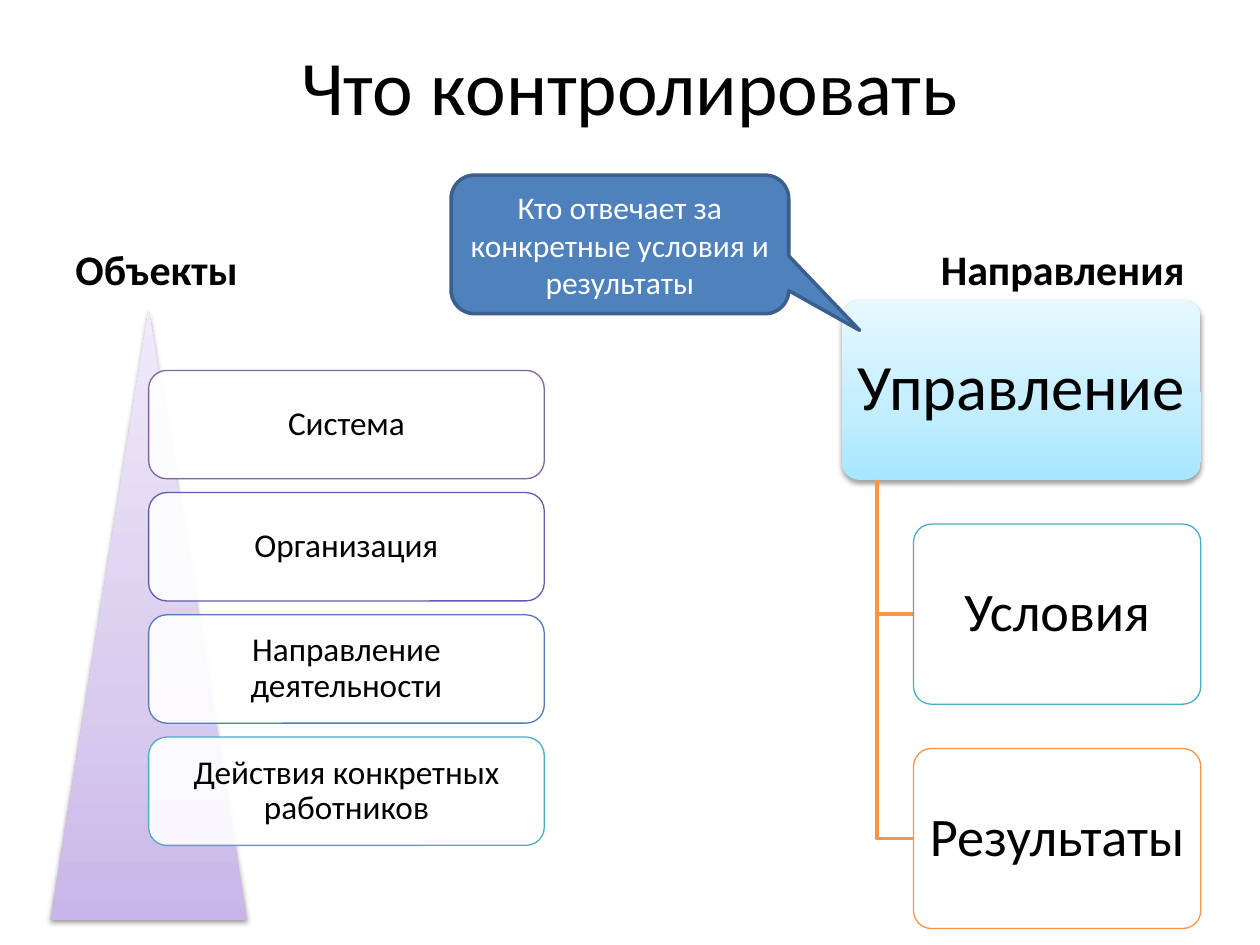
import copy
import pptx
import pptx.util
import pptx.dml.color
import pptx.oxml
import pptx.oxml.ns
import pptx.enum.shapes
import pptx.enum.text

Inches, Pt = pptx.util.Inches, pptx.util.Pt
SHAPE = pptx.enum.shapes.MSO_SHAPE
ALIGN = pptx.enum.text.PP_ALIGN
ANCHOR = pptx.enum.text.MSO_ANCHOR
qn = pptx.oxml.ns.qn

# Content
TITLE = "Что контролировать"
HEADS = [("Объекты", 0.5, ALIGN.LEFT), ("Направления", 5.08, ALIGN.RIGHT)]
LEVELS = [
    ("Система", "violet"),
    ("Организация", "indigo"),
    ("Направление деятельности", "blue"),
    ("Действия конкретных работников", "teal"),
]
ROOT = "Управление"
LEAVES = [("Условия", "teal"), ("Результаты", "orange")]
CALL = "Кто отвечает за конкретные условия и результаты"

COLORS = {
    "black": "000000", "white": "FFFFFF", "violet": "8064A2",
    "indigo": "5F5BAE", "blue": "537ABA", "teal": "4BACC6",
    "orange": "F79646", "call": "4F81BD", "edge": "3A5F8C",
}
LILAC = [(0, "C9B5E8"), (0.35, "D8CBEE"), (1, "F0EAF9")]
SKY = [(0, "A7E6FF"), (0.35, "C1EDFF"), (1, "E7F8FF")]
SHADE = (
    '<a:outerShdw %s blurRad="39370" dist="20320" dir="5400000" rotWithShape="0">'
    '<a:srgbClr val="000000"><a:alpha val="38000"/></a:srgbClr></a:outerShdw>'
    % pptx.oxml.ns.nsdecls("a")
)

# Layout rules, in inches
LEVEL_X, LEVEL_Y, LEVEL_W, LEVEL_H, LEVEL_STEP = 1.18, 2.94, 3.14, 0.86, 0.97
ROOT_X, ROOT_Y, ROOT_W, NODE_H = 6.68, 2.38, 2.85, 1.43
LEAF_X, LEAF_W, LEAF_STEP = 7.25, 2.28, 1.78
TRUNK_X = 6.96


def rgb(name):
    return pptx.dml.color.RGBColor.from_string(COLORS.get(name, name))


def write(shape, text, size, color="black", align=ALIGN.CENTER,
          anchor=ANCHOR.MIDDLE, pad=(0.1, 0.05), bold=False, spacing=None):
    frame = shape.text_frame
    frame.word_wrap = True
    frame.vertical_anchor = anchor
    frame.margin_left = frame.margin_right = Inches(pad[0])
    frame.margin_top = frame.margin_bottom = Inches(pad[1])
    frame.text = text
    para = frame.paragraphs[0]
    para.alignment = align
    para.line_spacing = spacing
    font = para.font
    font.name, font.size, font.bold = "Calibri", Pt(size), bold
    font.color.rgb = rgb(color)


def add(slide, kind, box, line=None, width=0.75):
    shape = slide.shapes.add_shape(kind, *map(Inches, box))
    shape.shadow.inherit = False
    if line:
        shape.line.color.rgb = rgb(line)
        shape.line.width = Pt(width)
    else:
        shape.line.fill.background()
    return shape


def fade(shape, stops):
    """Upward gradient with a soft shadow below."""
    fill = shape.fill
    fill.gradient()
    fill.gradient_angle = 90
    rows = shape.element.spPr.find(".//" + qn("a:gsLst"))
    while len(rows) < len(stops):
        rows.append(copy.deepcopy(rows[0]))
    for stop, (place, color) in zip(fill.gradient_stops, stops):
        stop.position = place
        stop.color.rgb = rgb(color)
    effects = shape.element.spPr.find(qn("a:effectLst"))
    effects.append(pptx.oxml.parse_xml(SHADE))


def card(slide, box, line):
    """Rounded box in slightly clear white."""
    shape = add(slide, SHAPE.ROUNDED_RECTANGLE, box, line)
    shape.fill.solid()
    shape.fill.fore_color.rgb = rgb("white")
    tint = shape.element.spPr.find(qn("a:solidFill"))[0]
    tint.append(tint.makeelement(qn("a:alpha"), {"val": "90000"}))
    return shape


def elbow(slide, y):
    """Branch from the root box to a leaf."""
    top = ROOT_Y + NODE_H
    pen = slide.shapes.build_freeform(Inches(TRUNK_X), Inches(top))
    pen.add_line_segments(
        [(Inches(TRUNK_X), Inches(y)), (Inches(LEAF_X), Inches(y))], close=False)
    shape = pen.convert_to_shape()
    shape.shadow.inherit = False
    shape.fill.background()
    shape.line.color.rgb = rgb("orange")
    shape.line.width = Pt(2)


def main():
    deck = pptx.Presentation()
    deck.slide_width, deck.slide_height = Inches(10), Inches(7.5)
    slide = deck.slides.add_slide(deck.slide_layouts[5])

    # Title and column heads
    title = slide.shapes.title
    title.left, title.top = Inches(0.5), Inches(0.05)
    title.width, title.height = Inches(9), Inches(1.25)
    write(title, TITLE, 44)
    for text, x, align in HEADS:
        head = slide.shapes.add_textbox(*map(Inches, (x, 1.68, 4.42, 0.7)))
        write(head, text, 24, align=align, anchor=ANCHOR.BOTTOM, bold=True)

    # Pyramid of objects
    peak = add(slide, SHAPE.ISOSCELES_TRIANGLE, (0.4, 2.46, 1.56, 4.84))
    fade(peak, LILAC)
    for i, (text, line) in enumerate(LEVELS):
        y = LEVEL_Y + i * LEVEL_STEP
        level = card(slide, (LEVEL_X, y, LEVEL_W, LEVEL_H), line)
        write(level, text, 19, pad=(0.08, 0.08), spacing=0.9)

    # Tree of directions
    root = add(slide, SHAPE.ROUNDED_RECTANGLE, (ROOT_X, ROOT_Y, ROOT_W, NODE_H))
    root.adjustments[0] = 0.1
    fade(root, SKY)
    write(root, ROOT, 37, pad=(0.04, 0.04), spacing=0.9)
    for i, (text, line) in enumerate(LEAVES, 1):
        y = ROOT_Y + i * LEAF_STEP
        elbow(slide, y + NODE_H / 2)
        leaf = card(slide, (LEAF_X, y, LEAF_W, NODE_H), line)
        leaf.adjustments[0] = 0.1
        write(leaf, text, 31, pad=(0.04, 0.04), spacing=0.9)

    # Callout
    call = add(slide, SHAPE.ROUNDED_RECTANGULAR_CALLOUT,
               (3.58, 1.39, 2.68, 1.1), "edge", 2)
    for i, value in enumerate((0.71, 0.62, 0.17)):
        call.adjustments[i] = value
    call.fill.solid()
    call.fill.fore_color.rgb = rgb("call")
    write(call, CALL, 18, "white")

    deck.save("out.pptx")


if __name__ == "__main__":
    main()
